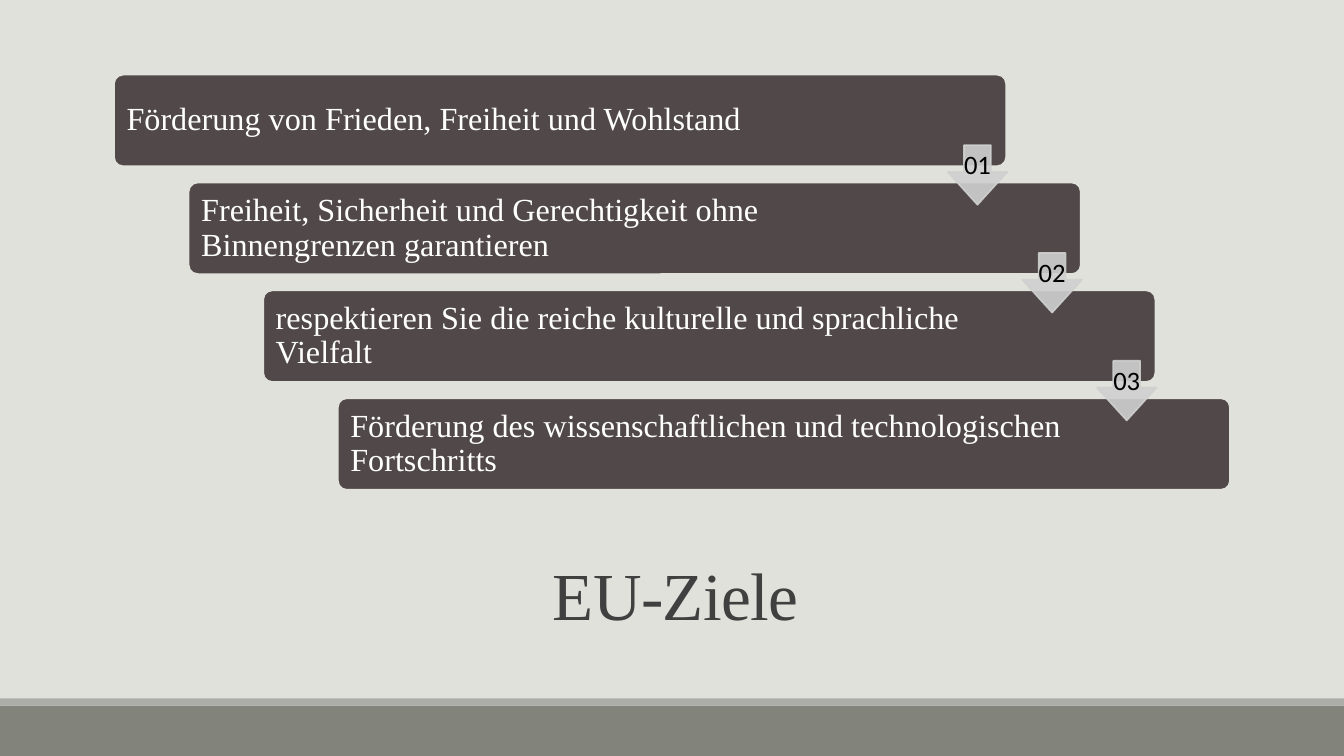
from lxml import etree
from pptx import Presentation
from pptx.dml.color import RGBColor
from pptx.enum.shapes import MSO_SHAPE
from pptx.enum.text import MSO_ANCHOR, PP_ALIGN
from pptx.oxml.ns import qn
from pptx.util import Inches, Pt

RECTANGLE = MSO_SHAPE.RECTANGLE
ROUNDED = MSO_SHAPE.ROUNDED_RECTANGLE
DOWN_ARROW = MSO_SHAPE.DOWN_ARROW
MIDDLE = MSO_ANCHOR.MIDDLE
LEFT, CENTER = PP_ALIGN.LEFT, PP_ALIGN.CENTER

PAPER = RGBColor(0xE1, 0xE1, 0xDB)
FOOTER = RGBColor(0x82, 0x84, 0x7C)
FOOTER_EDGE = RGBColor(0xAC, 0xAD, 0xA8)
STEP = RGBColor(0x51, 0x49, 0x49)
ARROW = RGBColor(0xD0, 0xD0, 0xD0)
TITLE = RGBColor(0x40, 0x40, 0x40)
WHITE = RGBColor(0xFF, 0xFF, 0xFF)
BLACK = RGBColor(0x00, 0x00, 0x00)

SERIF, SANS = "Times New Roman", "Calibri"
GOALS = [
    "Förderung von Frieden, Freiheit und Wohlstand",
    "Freiheit, Sicherheit und Gerechtigkeit ohne Binnengrenzen garantieren",
    "respektieren Sie die reiche kulturelle und sprachliche Vielfalt",
    "Förderung des wissenschaftlichen und technologischen Fortschritts",
]
STEP_RIGHT, STEP_DOWN = 0.74, 1.07


def add_block(slide, kind, left, top, width, height, fill, line=None):
    """Add a filled preset shape, outlined when a line colour is given."""
    block = slide.shapes.add_shape(
        kind, Inches(left), Inches(top), Inches(width), Inches(height))
    block.shadow.inherit = False
    block.fill.solid()
    block.fill.fore_color.rgb = fill
    if line is None:
        block.line.fill.background()
    else:
        block.line.color.rgb = line
        block.line.width = Pt(1.25)
    return block


def write(holder, text, font_name, size, color, align, spacing, insets=None):
    """Write one formatted paragraph, vertically centred, into a shape."""
    frame = holder.text_frame
    frame.vertical_anchor = MIDDLE
    frame.word_wrap = True
    if insets:
        (frame.margin_left, frame.margin_top,
         frame.margin_right, frame.margin_bottom) = map(Inches, insets)
    frame.text = text
    paragraph = frame.paragraphs[0]
    paragraph.alignment = align
    paragraph.line_spacing = spacing
    font = paragraph.font
    font.name, font.size = font_name, Pt(size)
    font.color.rgb = color
    return paragraph


def add_goal(slide, index, goal):
    """Add one step of the staircase with its goal."""
    step = add_block(slide, ROUNDED, 1.13 + index * STEP_RIGHT,
                     0.74 + index * STEP_DOWN, 8.85, 0.91, STEP, PAPER)
    step.adjustments[0] = 0.1
    write(step, goal, SERIF, 23, WHITE, LEFT, 0.9, (0.1, 0.1, 1.42, 0.1))


def add_numbered_arrow(slide, index):
    """Add the translucent numbered arrow leading to the next step."""
    arrow = add_block(slide, DOWN_ARROW, 9.4 + index * STEP_RIGHT,
                      1.44 + index * STEP_DOWN, 0.59, 0.59, ARROW, ARROW)
    arrow.adjustments[0], arrow.adjustments[1] = 0.45, 0.55
    for color in arrow._element.spPr.iter(qn("a:srgbClr")):
        etree.SubElement(color, qn("a:alpha"), val="90000")
    write(arrow, f"{index + 1:02d}", SANS, 19, BLACK, CENTER, 0.9,
          (0.03, 0.03, 0.03, 0.06))
    arrow.text_frame.word_wrap = False


def place_title(slide):
    """Move and format the title placeholder."""
    title = slide.shapes.title
    title.left, title.top = Inches(1.2), Inches(5.3)
    title.width, title.height = Inches(11), Inches(1.3)
    heading = write(title, "EU-Ziele", SERIF, 48, TITLE, CENTER, 0.85)
    heading.runs[0]._r.get_or_add_rPr().set("spc", "-50")


def main():
    """Build the slide with the EU goals."""
    deck = Presentation()
    deck.slide_width, deck.slide_height = Inches(13.33), Inches(7.5)
    slide = deck.slides.add_slide(deck.slide_layouts[5])
    slide.background.fill.solid()
    slide.background.fill.fore_color.rgb = PAPER
    add_block(slide, RECTANGLE, 0, 7, 13.33, 0.5, FOOTER)
    add_block(slide, RECTANGLE, 0, 6.93, 13.33, 0.07, FOOTER_EDGE)
    place_title(slide)
    for index, goal in enumerate(GOALS):
        add_goal(slide, index, goal)
    for index in range(len(GOALS) - 1):
        add_numbered_arrow(slide, index)
    deck.save("out.pptx")


if __name__ == "__main__":
    main()
